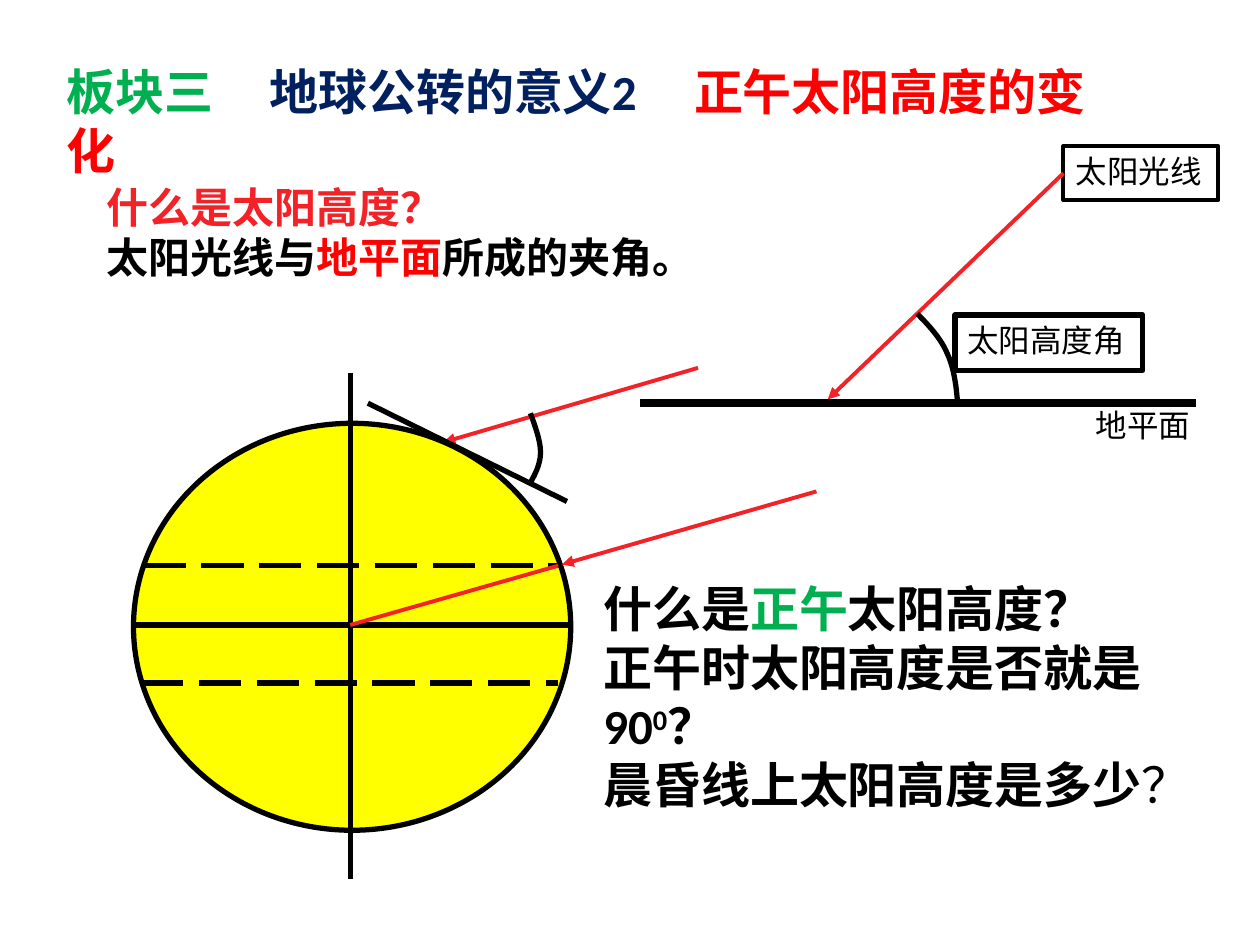
from lxml import etree
from pptx import Presentation
from pptx.dml.color import RGBColor
from pptx.enum.dml import MSO_LINE
from pptx.enum.shapes import MSO_CONNECTOR, MSO_SHAPE
from pptx.enum.text import MSO_ANCHOR, MSO_AUTO_SIZE, PP_ALIGN
from pptx.oxml.ns import qn
from pptx.util import Inches, Pt

COLORS = {
    "black": "000000",
    "green": "00B050",
    "navy": "002060",
    "red": "FF0000",
    "ray": "F22227",
    "globe": "FFFF00",
}


def rgb(name):
    return RGBColor.from_string(COLORS[name])


class Slide:
    font = "Calibri"

    def __init__(self, prs):
        self.s = prs.slides.add_slide(prs.slide_layouts[6])

    def outline(self, line, color, width):
        line.color.rgb = rgb(color)
        line.width = Pt(width)

    def add_runs(self, sp, paragraphs, size, bold=False, wrap=True, tabs=()):
        tf = sp.text_frame
        tf.word_wrap = wrap
        tf.auto_size = MSO_AUTO_SIZE.SHAPE_TO_FIT_TEXT
        tf.vertical_anchor = MSO_ANCHOR.TOP
        for i, runs in enumerate(paragraphs):
            p = tf.add_paragraph() if i else tf.paragraphs[0]
            p.alignment = PP_ALIGN.LEFT
            if tabs:
                tab_list = etree.SubElement(p._p.get_or_add_pPr(), qn("a:tabLst"))
                for pos in tabs:
                    etree.SubElement(tab_list, qn("a:tab"), pos=str(Inches(pos)), algn="l")
            for text, color, *style in runs:
                r = p.add_run()
                r.text = text
                r.font.name = self.font
                r.font.size = Pt(size)
                r.font.bold = bold and "plain" not in style
                r.font.color.rgb = rgb(color)
                if "super" in style:
                    r._r.get_or_add_rPr().set("baseline", "30000")

    def text(self, x, y, w, h, paragraphs, size, **style):
        sp = self.s.shapes.add_textbox(Inches(x), Inches(y), Inches(w), Inches(h))
        self.add_runs(sp, paragraphs, size, **style)

    def shape(self, kind, x, y, w, h, width, fill=None):
        sp = self.s.shapes.add_shape(kind, Inches(x), Inches(y), Inches(w), Inches(h))
        sp.shadow.inherit = False
        if fill:
            sp.fill.solid()
            sp.fill.fore_color.rgb = rgb(fill)
        else:
            sp.fill.background()
        self.outline(sp.line, "black", width)
        return sp

    def label(self, x, y, w, h, text, width):
        sp = self.shape(MSO_SHAPE.RECTANGLE, x, y, w, h, width)
        self.add_runs(sp, [[(text, "black")]], 18, wrap=False)
        return sp

    def line(self, x1, y1, x2, y2, color="black", width=3, dash=False, arrow=False):
        cx = self.s.shapes.add_connector(
            MSO_CONNECTOR.STRAIGHT, Inches(x1), Inches(y1), Inches(x2), Inches(y2))
        self.outline(cx.line, color, width)
        if dash:
            cx.line.dash_style = MSO_LINE.LONG_DASH
        sp_pr = cx._element.spPr
        if arrow:
            etree.SubElement(sp_pr.get_or_add_ln(), qn("a:tailEnd"), type="triangle")
        etree.SubElement(sp_pr, qn("a:effectLst"))
        return cx

    def ray(self, x1, y1, x2, y2, arrow=True):
        return self.line(x1, y1, x2, y2, "ray", 2.25, arrow=arrow)

    def arc(self, start, *curves, steps=12):
        points = []
        p0 = start
        for p1, p2, p3 in curves:
            for i in range(1, steps + 1):
                t = i / steps
                u = 1 - t
                points.append(tuple(
                    Inches(u**3 * a + 3 * u * u * t * b + 3 * u * t * t * c + t**3 * d)
                    for a, b, c, d in zip(p0, p1, p2, p3)))
            p0 = p3
        fb = self.s.shapes.build_freeform(Inches(start[0]), Inches(start[1]))
        fb.add_line_segments(points, close=False)
        sp = fb.convert_to_shape()
        sp.shadow.inherit = False
        sp.fill.background()
        self.outline(sp.line, "black", 3)


def main():
    prs = Presentation()
    prs.slide_width, prs.slide_height = Inches(10), Inches(7.5)
    slide = Slide(prs)

    slide.text(0.43, 0.44, 8.61, 0.57, [[
        ("板块三\t", "green"),
        ("地球公转的意义2\t", "navy"),
        ("正午太阳高度的变化", "red"),
    ]], 28, bold=True, tabs=(1.61, 4.98))

    slide.line(5.08, 3.2, 9.49, 3.2, width=4.5)
    slide.text(8.6, 3.17, 0.96, 0.4, [[("地平面", "black")]], 18, wrap=False)
    sunlight = slide.label(8.44, 1.16, 1.23, 0.43, "太阳光线", 2.25)
    slide.ray(8.44, 1.37, 6.57, 3.17).begin_connect(sunlight, 1)
    slide.arc((7.28, 2.49),
              ((7.38, 2.59), (7.47, 2.69), (7.52, 2.81)),
              ((7.57, 2.92), (7.59, 3.06), (7.6, 3.2)))
    slide.label(7.58, 2.5, 1.49, 0.44, "太阳高度角", 3)

    slide.shape(MSO_SHAPE.OVAL, 1.06, 3.36, 3.47, 3.23, 3, "globe")
    slide.line(1.06, 4.96, 4.53, 4.96)
    for x, y in ((1.14, 4.49), (1.12, 5.42)):
        slide.line(x, y, x + 3.31, y, dash=True)
    slide.line(2.78, 2.96, 2.78, 6.98)

    slide.ray(6.48, 3.9, 4.46, 4.48)
    slide.ray(2.78, 4.96, 4.43, 4.49, arrow=False)
    slide.ray(5.54, 2.92, 3.52, 3.51)
    slide.line(2.92, 3.2, 4.5, 3.98)
    slide.arc((4.21, 3.28),
              ((4.25, 3.39), (4.29, 3.5), (4.29, 3.59)),
              ((4.29, 3.68), (4.25, 3.76), (4.21, 3.83)))

    slide.text(0.75, 1.39, 5.01, 0.91, [
        [("什么是太阳高度？", "ray")],
        [("太阳光线与", "black"), ("地平面", "red"), ("所成的夹角。", "black")],
    ], 24, bold=True)
    slide.text(4.69, 4.54, 5.04, 1.99, [
        [("什么是", "black"), ("正午", "green"), ("太阳高度？", "black")],
        [("正午时太阳高度是否就是90", "black"), ("0", "black", "super"), ("？", "black")],
        [("晨昏线上太阳高度是多少", "black"), ("？", "black", "plain")],
    ], 28, bold=True)

    prs.save("out.pptx")


if __name__ == "__main__":
    main()
